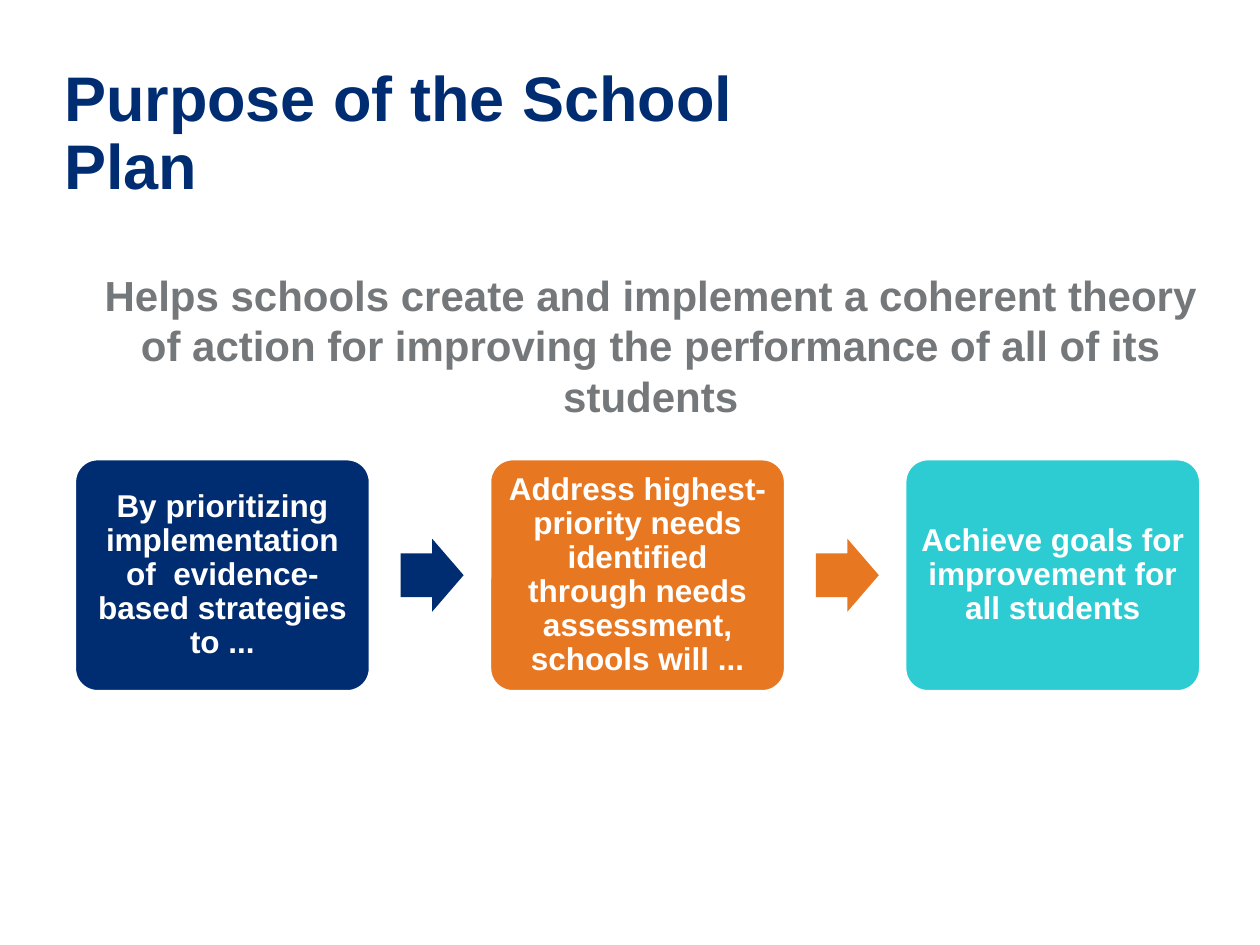
from pptx import Presentation
from pptx.dml.color import RGBColor
from pptx.enum.shapes import MSO_SHAPE
from pptx.enum.text import MSO_ANCHOR, PP_ALIGN
from pptx.util import Inches, Pt

NAVY = RGBColor(0x00, 0x2D, 0x72)
ORANGE = RGBColor(0xE8, 0x77, 0x22)
TEAL = RGBColor(0x2D, 0xCC, 0xD3)
GRAY = RGBColor(0x75, 0x78, 0x7B)
WHITE = RGBColor(0xFF, 0xFF, 0xFF)

STEPS = [
    ("By prioritizing implementation of  evidence-based strategies to ...", NAVY),
    ("Address highest- priority needs identified through needs assessment, "
     "schools will ...", ORANGE),
    ("Achieve goals for improvement for all students", TEAL),
]
STEP_LEFT, STEP_TOP, STEP_WIDTH, STEP_HEIGHT = 0.59, 3.64, 2.35, 1.85
STEP_PITCH = 3.295
ARROW_GAP, ARROW_WIDTH, ARROW_HEIGHT = 0.24, 0.5, 0.58


def write(frame, text, size, color, align, anchor, spacing, side, edge):
    """Put one bold paragraph into a text frame."""
    frame.word_wrap = True
    frame.vertical_anchor = anchor
    frame.margin_left = frame.margin_right = Inches(side)
    frame.margin_top = frame.margin_bottom = Inches(edge)
    paragraph = frame.paragraphs[0]
    paragraph.alignment = align
    paragraph.line_spacing = spacing
    run = paragraph.add_run()
    run.text = text
    run.font.name = "Arial"
    run.font.size = Pt(size)
    run.font.bold = True
    run.font.color.rgb = color


def add_label(slide, left, top, width, height):
    """Add a text box and return its text frame."""
    return slide.shapes.add_textbox(
        Inches(left), Inches(top), Inches(width), Inches(height)).text_frame


def add_filled(slide, kind, left, top, width, height, color, adjustments):
    """Add a flat preset shape in one colour, without an outline."""
    shape = slide.shapes.add_shape(
        kind, Inches(left), Inches(top), Inches(width), Inches(height))
    shape.shadow.inherit = False
    shape.fill.solid()
    shape.fill.fore_color.rgb = color
    shape.line.fill.background()
    for index, value in enumerate(adjustments):
        shape.adjustments[index] = value
    return shape


def add_step(slide, left, text, color):
    """Add one rounded step card with its text."""
    card = add_filled(slide, MSO_SHAPE.ROUNDED_RECTANGLE, left, STEP_TOP,
                      STEP_WIDTH, STEP_HEIGHT, color, [0.1])
    card.line.color.rgb = WHITE
    card.line.width = Pt(2)
    write(card.text_frame, text, 18, WHITE, PP_ALIGN.CENTER,
          MSO_ANCHOR.MIDDLE, 0.9, 0.07, 0.07)


def add_step_arrow(slide, step_left, color):
    """Add the arrow that follows a step."""
    add_filled(slide, MSO_SHAPE.RIGHT_ARROW,
               step_left + STEP_WIDTH + ARROW_GAP,
               STEP_TOP + (STEP_HEIGHT - ARROW_HEIGHT) / 2,
               ARROW_WIDTH, ARROW_HEIGHT, color, [0.6, 0.5])


def main():
    """Build the slide and save it."""
    deck = Presentation()
    deck.slide_width, deck.slide_height = Inches(10), Inches(7.5)
    slide = deck.slides.add_slide(deck.slide_layouts[6])

    write(add_label(slide, 0.46, 0.4, 6.36, 1.35), "Purpose of the School Plan",
          36, NAVY, PP_ALIGN.LEFT, MSO_ANCHOR.MIDDLE, 0.9, 0.05, 0.05)
    for index, (text, color) in enumerate(STEPS):
        left = STEP_LEFT + index * STEP_PITCH
        add_step(slide, left, text, color)
        if index < len(STEPS) - 1:
            add_step_arrow(slide, left, color)
    write(add_label(slide, 0.58, 2.09, 9.17, 1.33),
          "Helps schools create and implement a coherent theory of action for "
          "improving the performance of all of its students",
          24, GRAY, PP_ALIGN.CENTER, MSO_ANCHOR.TOP, 1.0, 0.1, 0.05)

    deck.save("out.pptx")


if __name__ == "__main__":
    main()
